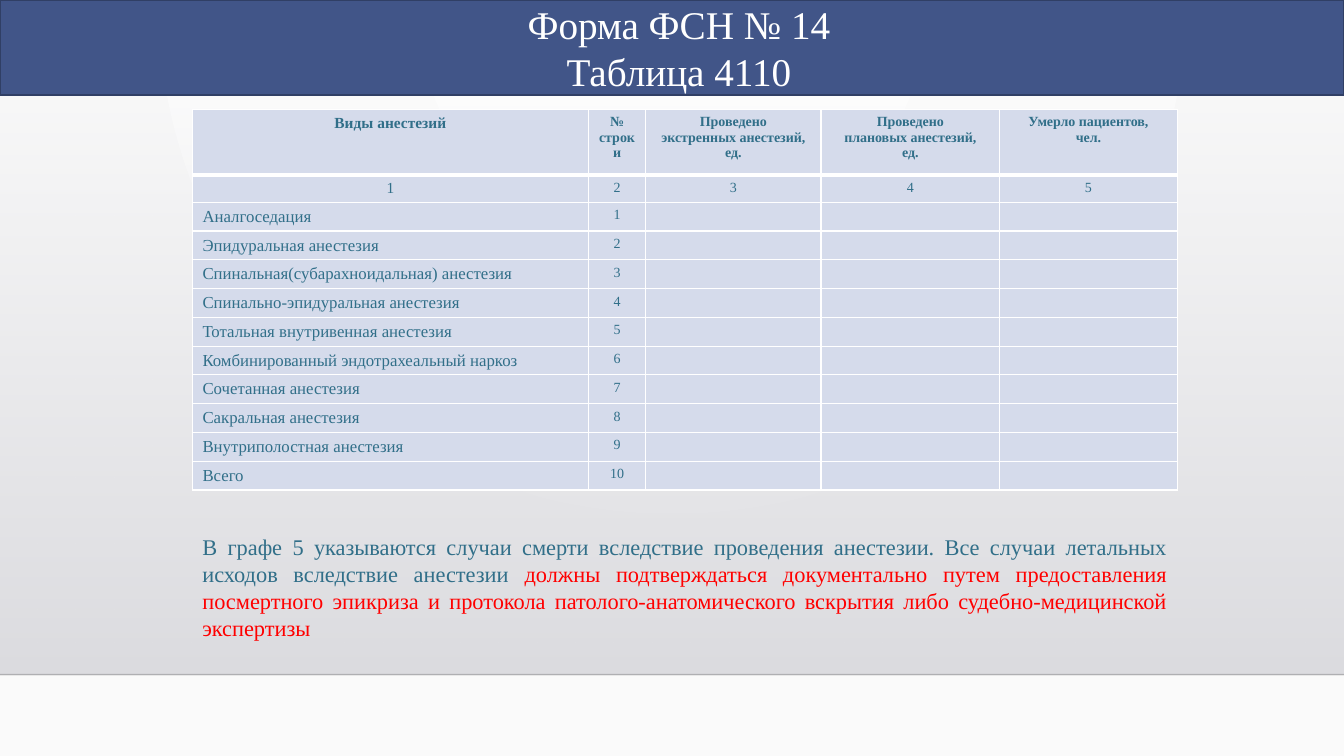
from lxml import etree
from pptx import Presentation
from pptx import util as u
from pptx.dml import color
from pptx.enum import shapes, text
from pptx.oxml import ns

FONT = "Times New Roman"
TEAL, RED, WHITE, CELL = "316F89", "FF0000", "FFFFFF", "D5DBEB"
TITLE = "Форма ФСН № 14\nТаблица 4110"
HEADS = [
    "Виды анестезий",
    "№ строки",
    "Проведено\nэкстренных анестезий,\nед.",
    "Проведено\nплановых анестезий,\nед.",
    "Умерло пациентов,\nчел.",
]
KINDS = [
    "Аналгоседация",
    "Эпидуральная анестезия",
    "Спинальная(субарахноидальная) анестезия",
    "Спинально-эпидуральная анестезия",
    "Тотальная внутривенная анестезия",
    "Комбинированный эндотрахеальный наркоз",
    "Сочетанная анестезия",
    "Сакральная анестезия",
    "Внутриполостная анестезия",
    "Всего",
]
NOTE = [
    ("В графе 5 указываются случаи смерти вследствие проведения анестезии. "
     "Все случаи летальных исходов вследствие анестезии ", TEAL),
    ("должны подтверждаться документально путем предоставления посмертного "
     "эпикриза и протокола патолого-анатомического вскрытия либо "
     "судебно-медицинской экспертизы", RED),
]
WIDE, HIGH = u.Cm(33.87), u.Cm(19.05)
LEFT, SPAN = u.Cm(4.85), u.Cm(24.82)
COLS = [9.98, 1.44, 4.42, 4.5, 4.48]
ROWS = [1.65, 0.66] + [0.72] * len(KINDS)


def rgb(code):
    return color.RGBColor.from_string(code)


def add(node, tag, **attrs):
    return etree.SubElement(node, ns.qn(tag), **attrs)


def style(run, size, code, bold=False):
    font = run.font
    font.name, font.size, font.bold = FONT, u.Pt(size), bold
    font.color.rgb = rgb(code)


def blend(fill, codes):
    fill.gradient()
    for stop, code in zip(fill.gradient_stops, codes):
        stop.color.rgb = rgb(code)


def fade(node, share):
    add(next(node.iter(ns.qn("a:srgbClr"))), "a:alpha", val=str(share * 1000))


def edge(cell, side, width):
    line = add(cell._tc.get_or_add_tcPr(), "a:ln" + side, w=str(u.Pt(width)))
    add(add(line, "a:solidFill"), "a:srgbClr", val=WHITE)


def backdrop(slide):
    fill = slide.background.fill
    blend(fill, ["FFFFFF", "FAFAFA"])
    grad = next(slide.background._cSld.iter(ns.qn("a:gradFill")))
    grad.remove(grad.find(ns.qn("a:lin")))
    ring = add(grad, "a:path", path="circle")
    add(ring, "a:fillToRect", l="43000", t="0", r="43000", b="100000")

    top, end = u.Cm(1.3), u.Cm(17)
    pane = slide.shapes.add_shape(
        shapes.MSO_SHAPE.RECTANGLE, 0, top, WIDE, end - top)
    pane.shadow.inherit = False
    pane.line.fill.background()
    blend(pane.fill, ["DCDCE0", "DEDEE2"])
    pane.fill.gradient_angle = 270
    fade(pane._element.spPr, 0)

    rule = slide.shapes.add_connector(
        shapes.MSO_CONNECTOR.STRAIGHT, 0, end, WIDE, end)
    rule.line.width = u.Pt(1)
    rule.line.color.rgb = rgb("000001")
    fade(rule._element.spPr, 20)
    add(rule._element.spPr, "a:effectLst")


def banner(slide):
    title = slide.shapes.title
    slide.shapes._spTree.append(title._element)
    title.left, title.top, title.width, title.height = 0, 0, WIDE, u.Cm(2.39)
    title.fill.solid()
    title.fill.fore_color.rgb = rgb("415588")
    title.line.color.rgb = rgb("303F65")
    title.line.width = u.Pt(1.25)
    frame = title.text_frame
    frame.text = TITLE
    frame.auto_size = text.MSO_AUTO_SIZE.NONE
    frame.vertical_anchor = text.MSO_ANCHOR.MIDDLE
    frame.margin_left = u.Cm(0.6)
    for para in frame.paragraphs:
        para.alignment = text.PP_ALIGN.CENTER
        style(para.runs[0], 28, WHITE)


def grid(slide):
    body = [HEADS, [str(n + 1) for n in range(len(COLS))]]
    body += [[kind, str(n), "", "", ""] for n, kind in enumerate(KINDS, 1)]
    table = slide.shapes.add_table(
        len(ROWS), len(COLS), LEFT, u.Cm(2.76), SPAN, u.Cm(sum(ROWS))).table
    for col, width in zip(table.columns, COLS):
        col.width = u.Cm(width)
    for row, high in zip(table.rows, ROWS):
        row.height = u.Cm(high)
    for r, words in enumerate(body):
        for c, word in enumerate(words):
            cell = table.cell(r, c)
            for side in "LRTB":
                heavy = (r, side) in [(0, "B"), (1, "T")]
                edge(cell, side, 3 if heavy else 1)
            cell.fill.solid()
            cell.fill.fore_color.rgb = rgb(CELL)
            cell.text_frame.text = word
            named = c == 0 and r > 1
            size = 12 if named else 11 if c == 0 else 10
            for para in cell.text_frame.paragraphs:
                para.alignment = (
                    text.PP_ALIGN.LEFT if named else text.PP_ALIGN.CENTER)
                for run in para.runs:
                    style(run, size, TEAL, r == 0)
                if not word:
                    add(para._p, "a:endParaRPr", sz=str(size * 100))


def note(slide):
    box = slide.shapes.add_textbox(LEFT, u.Cm(13.31), SPAN, u.Cm(3))
    box.text_frame.word_wrap = True
    para = box.text_frame.paragraphs[0]
    para.alignment = text.PP_ALIGN.JUSTIFY
    for words, code in NOTE:
        run = para.add_run()
        run.text = words
        style(run, 16, code)


def main():
    deck = Presentation()
    deck.slide_width, deck.slide_height = WIDE, HIGH
    slide = deck.slides.add_slide(deck.slide_layouts[5])
    for part in (backdrop, banner, grid, note):
        part(slide)
    deck.save("out.pptx")


if __name__ == "__main__":
    main()
